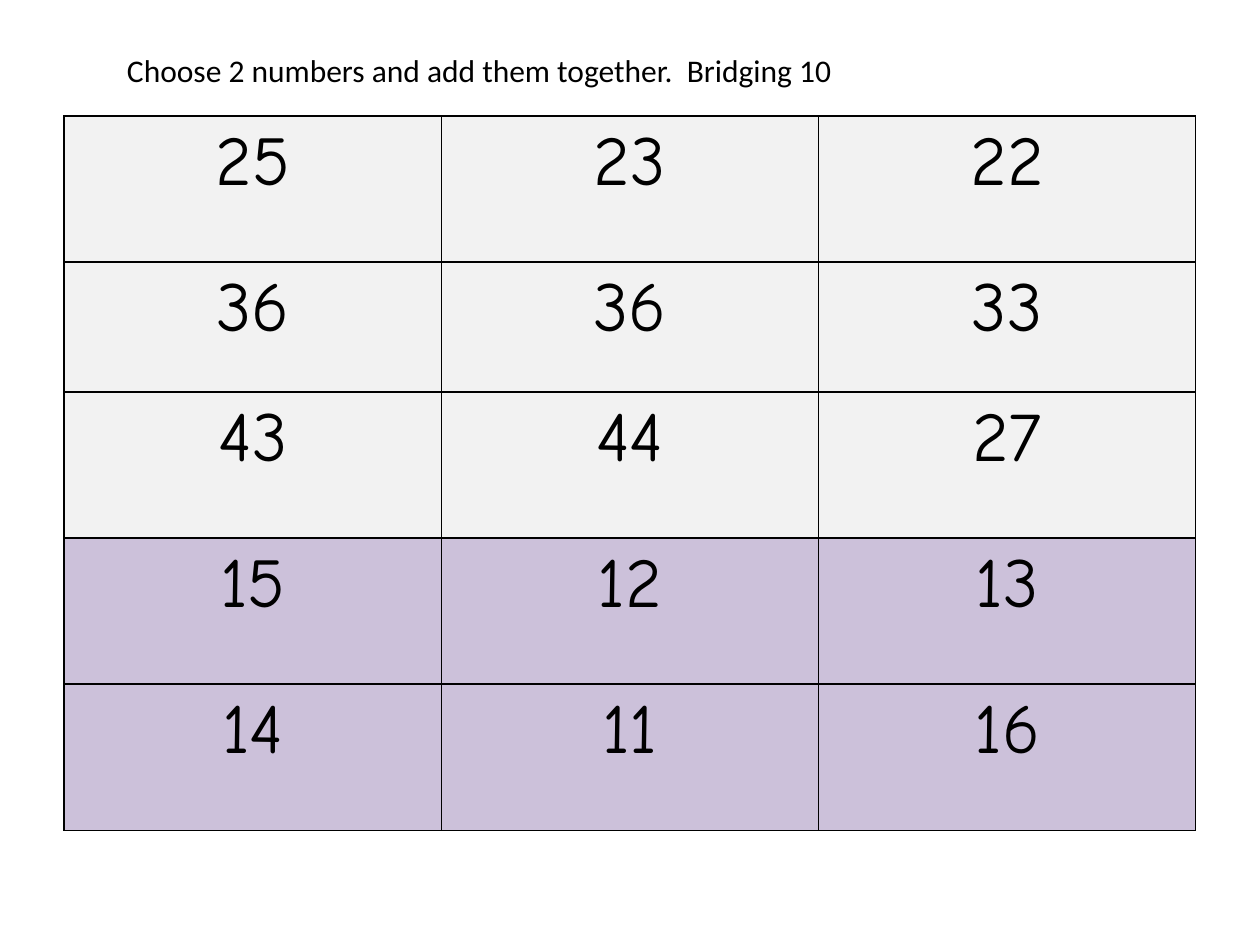
from pptx import Presentation
from pptx.dml.color import RGBColor
from pptx.enum.text import MSO_AUTO_SIZE as AutoSize, PP_ALIGN as Align
from pptx.oxml import parse_xml
from pptx.oxml.ns import nsdecls
from pptx.util import Inches, Pt

COLORS = {"ink": "000000", "first": "F2F2F2", "second": "CCC1DA"}
NUMBER_ROWS = [
    ("first", 1.16, (25, 23, 22)),
    ("first", 1.03, (36, 36, 33)),
    ("first", 1.16, (43, 44, 27)),
    ("second", 1.16, (15, 12, 13)),
    ("second", 1.16, (14, 11, 16)),
]


def write(frame, text, font, size, align=Align.LEFT, color="ink"):
    para = frame.paragraphs[0]
    para.alignment = align
    span = para.add_run()
    span.text = text
    span.font.name = font
    span.font.size = Pt(size)
    span.font.color.rgb = RGBColor.from_string(COLORS[color])


def border_cell(cell, color="ink", width=1):
    properties = cell._tc.get_or_add_tcPr()
    for index, side in enumerate(("lnL", "lnR", "lnT", "lnB")):
        properties.insert(index, parse_xml(
            f'<a:{side} {nsdecls("a")} w="{Pt(width)}"><a:solidFill>'
            f'<a:srgbClr val="{COLORS[color]}"/></a:solidFill></a:{side}>'))


def add_instruction(page, left, top, width, height):
    box = page.shapes.add_textbox(Inches(left), Inches(top), Inches(width), Inches(height))
    box.text_frame.word_wrap = False
    box.text_frame.auto_size = AutoSize.SHAPE_TO_FIT_TEXT
    write(box.text_frame, "Choose 2 numbers and add them together.  Bridging 10", "Calibri", 18)


def add_number_grid(page, left, top, width, height):
    columns = len(NUMBER_ROWS[0][2])
    grid = page.shapes.add_table(len(NUMBER_ROWS), columns, Inches(left), Inches(top),
                                 Inches(width), Inches(height)).table
    grid.first_row = False
    grid.horz_banding = False
    for column in grid.columns:
        column.width = Inches(width / columns)
    for row, (color, row_height, numbers) in zip(grid.rows, NUMBER_ROWS):
        row.height = Inches(row_height)
        for cell, number in zip(row.cells, numbers):
            cell.fill.solid()
            cell.fill.fore_color.rgb = RGBColor.from_string(COLORS[color])
            border_cell(cell)
            write(cell.text_frame, str(number), "Comic Neue", 40, align=Align.CENTER)


def main():
    deck = Presentation()
    deck.slide_width, deck.slide_height = Inches(10), Inches(7.5)
    page = deck.slides.add_slide(deck.slide_layouts[6])
    add_number_grid(page, 0.51, 0.92, 8.98, 5.67)
    add_instruction(page, 0.91, 0.36, 5.87, 0.4)
    deck.save("out.pptx")


if __name__ == "__main__":
    main()
